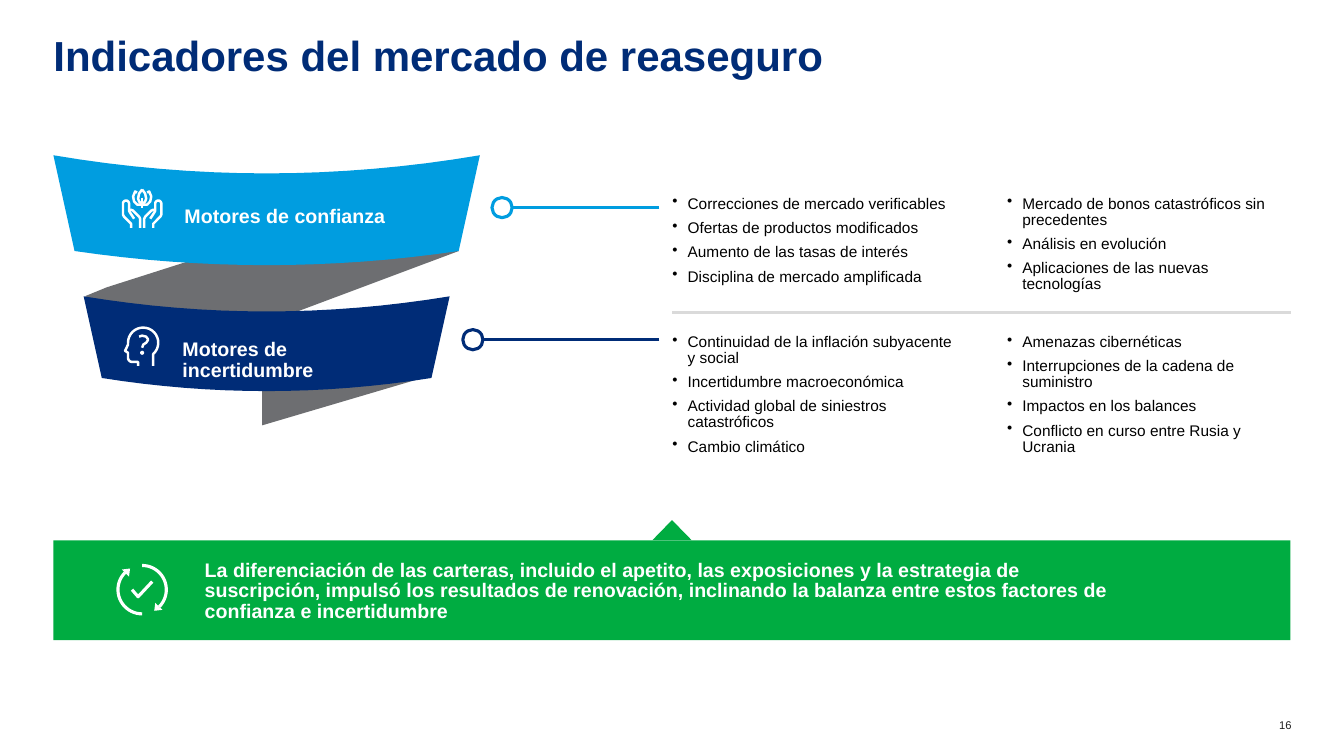
import math
from dataclasses import dataclass

import pptx
import pptx.dml.color
import pptx.enum.shapes
import pptx.enum.text
import pptx.oxml.ns
import pptx.util
from lxml import etree

PX = 9144
Color = pptx.dml.color.RGBColor
Kind = pptx.enum.shapes.MSO_SHAPE
NAVY = Color(0x00, 0x2C, 0x77)
SKY = Color(0x00, 0x9D, 0xE0)
GREEN = Color(0x00, 0xAC, 0x41)
GRAY = Color(0x6D, 0x6E, 0x71)
SILVER = Color(0xDA, 0xDA, 0xDA)
INK = Color(0x20, 0x20, 0x20)
BLACK = Color(0, 0, 0)
WHITE = Color(0xFF, 0xFF, 0xFF)

Points = list[tuple[float, float]]


@dataclass(frozen=True)
class Edge:
    left: int
    right: int
    top: int
    sag: int

    def points(self) -> Points:
        steps = [i / 16 for i in range(17)]
        return [(self.left + (self.right - self.left) * t,
                 self.top + 4 * self.sag * t * (1 - t)) for t in steps]


@dataclass(frozen=True)
class Driver:
    upper: Edge
    lower: Edge
    color: Color
    label: str
    label_box: tuple[int, int, int, int]
    ring_left: int
    leader_y: int
    list_box: tuple[int, int, int, int]
    items: list[str]


@dataclass(frozen=True)
class Icon:
    strokes: list[Points]
    solids: list[Points]
    weight: float


def arc(x: int, y: int, radius: int, start: int, end: int) -> Points:
    angles = [math.radians(start + (end - start) * i / 20) for i in range(21)]
    return [(x + radius * math.cos(a), y + radius * math.sin(a)) for a in angles]


def mirror(points: Points) -> Points:
    return [(282 - x, y) for x, y in points]


def half_turn(points: Points) -> Points:
    return [(282 - x, 1170 - y) for x, y in points]


HAND = [(130, 226), (130, 222), (123, 215), (122, 213), *arc(125, 202, 3, 180, 360),
        (128, 209), (129, 211), (133, 217)]
THUMB = [(128, 209), (130, 208), (132, 209), (138, 215), (139, 217), (139, 226)]
BUD = [(141, 188), (138, 192), (137, 197), (138, 200), (141, 203)]
PETAL = [(136, 191), (134, 190), (132, 195), (133, 200), (136, 203), (141, 203)]
STEM = [(141, 196), (141, 206)]
HEAD = [(152, 363), (152, 351), *arc(142, 340, 15, 48, -180), (127, 342), (124, 348),
        (127, 350), *arc(131, 355, 4, 180, 90), (137, 359), (137, 363)]
QUESTION = [(138, 334), (141, 333), (145, 334), (147, 337), (145, 340), (142, 342), (141, 345)]
CHECK = [(131, 585), (137, 592), (151, 577)]
CYCLE = arc(141, 585, 24, -90, 45)
CYCLE_TIP = [(154, 598), (153, 606), (161, 605)]

HALVES = [HAND, THUMB, BUD, PETAL]
ICONS = [
    Icon([*HALVES, *map(mirror, HALVES), STEM], [], 1.75),
    Icon([HEAD, QUESTION], [arc(141, 350, 2, 0, 360)], 1.75),
    Icon([CHECK, CYCLE, half_turn(CYCLE)], [CYCLE_TIP, half_turn(CYCLE_TIP)], 2.25),
]

FOLDS = [
    [(222, 249), (200, 255), (153, 270), (106, 285), (84, 294), (173, 317), (295, 309), (455, 249)],
    [(260, 382), (260, 422), (419, 375)],
]

DRIVERS = [
    Driver(Edge(53, 476, 154, 18), Edge(74, 455, 249, 14), SKY,
           "Motores de confianza", (183, 206, 206, 20), 488, 206, (667, 195, 614, 99),
           ["Correcciones de mercado verificables", "Ofertas de productos modificados",
            "Aumento de las tasas de interés", "Disciplina de mercado amplificada",
            "Mercado de bonos catastróficos sin precedentes", "Análisis en evolución",
            "Aplicaciones de las nuevas tecnologías"]),
    Driver(Edge(83, 446, 294, 15), Edge(101, 428, 375, 13), NAVY,
           "Motores de incertidumbre", (181, 338, 238, 20), 459, 337, (667, 332, 614, 129),
           ["Continuidad de la inflación subyacente y social", "Incertidumbre macroeconómica",
            "Actividad global de siniestros catastróficos", "Cambio climático",
            "Amenazas cibernéticas", "Interrupciones de la cadena de suministro",
            "Impactos en los balances", "Conflicto en curso entre Rusia y Ucrania"]),
]

CONCLUSION = ("La diferenciación de las carteras, incluido el apetito, las exposiciones y la "
              "estrategia de suscripción, impulsó los resultados de renovación, inclinando la "
              "balanza entre estos factores de confianza e incertidumbre")


def paint(shape, fill: Color | None, line: Color | None = None, weight: float = 0) -> None:
    shape.shadow.inherit = False
    if fill is None:
        shape.fill.background()
    else:
        shape.fill.solid()
        shape.fill.fore_color.rgb = fill
    if line is None:
        shape.line.fill.background()
    else:
        shape.line.color.rgb = line
        shape.line.width = pptx.util.Pt(weight)


def add_outline(shapes, points: Points, close: bool = True):
    corners = [(round(x * PX), round(y * PX)) for x, y in points]
    builder = shapes.build_freeform(*corners[0])
    builder.add_line_segments(corners[1:], close=close)
    return builder.convert_to_shape()


def add_preset(page, kind: Kind, box: tuple[int, int, int, int]):
    return page.shapes.add_shape(kind, *(v * PX for v in box))


def add_line(page, x1: int, x2: int, y: int, color: Color, weight: float) -> None:
    line = page.shapes.add_connector(pptx.enum.shapes.MSO_CONNECTOR.STRAIGHT,
                                     x1 * PX, y * PX, x2 * PX, y * PX)
    line.line.color.rgb = color
    line.line.width = pptx.util.Pt(weight)
    etree.SubElement(line.element.spPr, pptx.oxml.ns.qn("a:effectLst"))


def add_text(page, box: tuple[int, int, int, int], lines: list[str], size: int, color: Color,
             bold: bool = False, spacing: float = 0.86, bullets: bool = False,
             align=pptx.enum.text.PP_ALIGN.LEFT):
    shape = page.shapes.add_textbox(*(v * PX for v in box))
    frame = shape.text_frame
    frame.word_wrap = True
    frame.margin_left = frame.margin_top = frame.margin_right = frame.margin_bottom = 0
    frame.text = "\n".join(lines)
    for para in frame.paragraphs:
        if bullets:
            props = para._p.get_or_add_pPr()
            props.set("marL", str(15 * PX))
            props.set("indent", str(-15 * PX))
            etree.SubElement(props, pptx.oxml.ns.qn("a:buChar"), char="•")
            para.space_after = pptx.util.Pt(6)
        para.line_spacing = spacing
        para.alignment = align
        para.font.name = "Arial"
        para.font.size = pptx.util.Pt(size)
        para.font.bold = bold
        para.font.color.rgb = color
    return shape


def add_driver(page, driver: Driver) -> None:
    band = driver.upper.points() + driver.lower.points()[::-1]
    paint(add_outline(page.shapes, band), driver.color)
    add_line(page, 654, driver.ring_left + 8, driver.leader_y, driver.color, 2.25)
    ring = add_preset(page, Kind.OVAL, (driver.ring_left, driver.leader_y - 10, 20, 20))
    paint(ring, WHITE, driver.color, 2.25)
    add_text(page, driver.label_box, [driver.label], 14, WHITE, bold=True)
    columns = add_text(page, driver.list_box, driver.items, 11, BLACK, bullets=True)
    body = columns.element.txBody.bodyPr
    body.set("numCol", "2")
    body.set("spcCol", str(50 * PX))
    columns.text_frame.auto_size = pptx.enum.text.MSO_AUTO_SIZE.SHAPE_TO_FIT_TEXT


def add_icon(page, icon: Icon) -> None:
    group = page.shapes.add_group_shape()
    for stroke in icon.strokes:
        paint(add_outline(group.shapes, stroke, close=False), None, WHITE, icon.weight)
    for solid in icon.solids:
        paint(add_outline(group.shapes, solid), WHITE)


def main() -> None:
    deck = pptx.Presentation()
    deck.slide_width, deck.slide_height = 1333 * PX, 750 * PX
    page = deck.slides.add_slide(deck.slide_layouts[6])
    add_text(page, (53, 39, 1227, 54), ["Indicadores del mercado de reaseguro"], 30, NAVY,
             bold=True, spacing=0.8)
    for fold in FOLDS:
        paint(add_outline(page.shapes, fold), GRAY)
    for driver in DRIVERS:
        add_driver(page, driver)
    add_line(page, 667, 1280, 310, SILVER, 1.5)
    paint(add_preset(page, Kind.RECTANGLE, (53, 536, 1227, 99)), GREEN)
    paint(add_preset(page, Kind.ISOSCELES_TRIANGLE, (647, 516, 39, 20)), GREEN)
    add_text(page, (203, 557, 911, 61), [CONCLUSION], 14, WHITE, bold=True)
    for icon in ICONS:
        add_icon(page, icon)
    add_text(page, (1250, 713, 31, 13), ["16"], 8, INK, spacing=1.0,
             align=pptx.enum.text.PP_ALIGN.RIGHT)
    deck.save("out.pptx")


if __name__ == "__main__":
    main()
